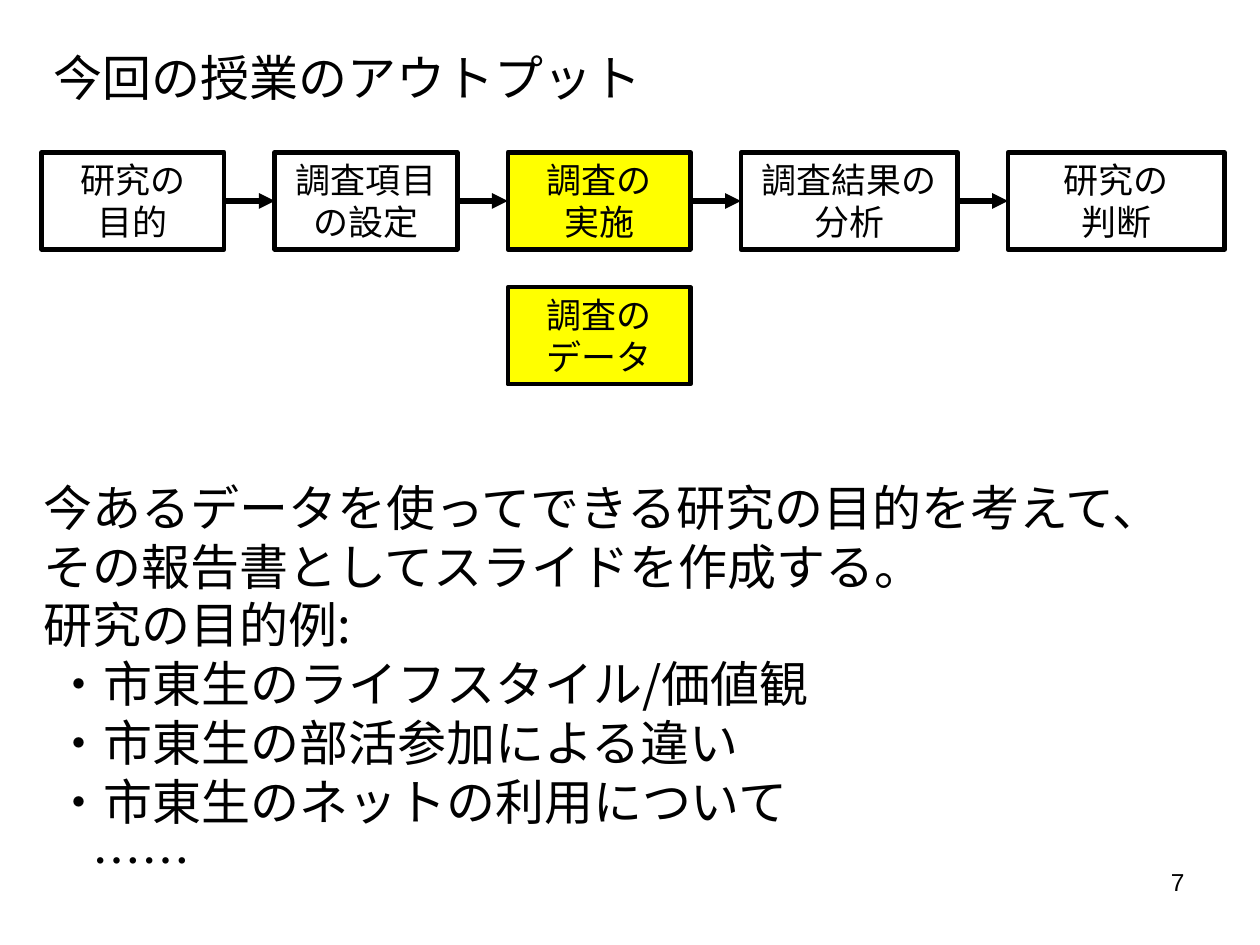
from pptx import Presentation
from pptx import util as u
from pptx.dml.color import RGBColor
from pptx.enum import shapes, text
from pptx.oxml.ns import qn
from lxml import etree

BLACK = RGBColor(0, 0, 0)
WHITE = RGBColor(255, 255, 255)
YELLOW = RGBColor(255, 255, 0)
JAPANESE = "Noto Sans CJK JP"

# Content
TITLE = "今回の授業のアウトプット"
STEPS = [  # text, width, fill
    ("研究の\v目的", 1.45, WHITE),
    ("調査項目の設定", 1.45, WHITE),
    ("調査の\v実施", 1.45, YELLOW),
    ("調査結果の分析", 1.72, WHITE),
    ("研究の\v判断", 1.72, WHITE),
]
OUTPUT = "調査の\vデータ"
OUTPUT_STEP = 2
EXPLANATION = [
    "今あるデータを使ってできる研究の目的を考えて、その報告書としてスライドを作成する。",
    "研究の目的例:",
    " ・市東生のライフスタイル/価値観",
    " ・市東生の部活参加による違い",
    " ・市東生のネットの利用について",
    "　……",
]
PAGE_NUMBER = "7"

# Layout in inches
FLOW_LEFT, FLOW_TOP, GAP = 0.33, 1.21, 0.4
BOX_HEIGHT, OUTPUT_TOP = 0.77, 2.28

prs = Presentation()
prs.slide_width, prs.slide_height = u.Inches(10), u.Inches(7.5)
slide = prs.slides.add_slide(prs.slide_layouts[6])


def write(shape, paragraphs, size, font=JAPANESE, align=text.PP_ALIGN.LEFT,
          anchor=text.MSO_ANCHOR.TOP):
    frame = shape.text_frame
    frame.word_wrap = True
    frame.vertical_anchor = anchor
    for i, words in enumerate(paragraphs):
        para = frame.add_paragraph() if i else frame.paragraphs[0]
        para.text = words
        para.alignment = align
        if font == JAPANESE:
            para.line_spacing = u.Pt(size * 1.2)
        for run in para.runs:
            for name, value in {"size": u.Pt(size), "name": font}.items():
                setattr(run.font, name, value)
            run.font.color.rgb = BLACK
            east_asian = etree.SubElement(run.font._element, qn("a:ea"))
            east_asian.set("typeface", font)


def add_text(place, paragraphs, size, **style):
    write(slide.shapes.add_textbox(*map(u.Inches, place)), paragraphs, size, **style)


def add_box(left, top, width, words, fill):
    box = slide.shapes.add_shape(shapes.MSO_SHAPE.RECTANGLE,
                                 *map(u.Inches, (left, top, width, BOX_HEIGHT)))
    box.shadow.inherit = False
    box.fill.solid()
    box.fill.fore_color.rgb = fill
    box.line.color.rgb = BLACK
    box.line.width = u.Pt(2.5)
    write(box, [words], 20, align=text.PP_ALIGN.CENTER, anchor=text.MSO_ANCHOR.MIDDLE)
    return box


def add_arrow(source, target):
    arrow = slide.shapes.add_connector(shapes.MSO_CONNECTOR.STRAIGHT, 0, 0, 0, 0)
    arrow.begin_connect(source, 3)
    arrow.end_connect(target, 1)
    arrow.line.color.rgb = BLACK
    arrow.line.width = u.Pt(3)
    etree.SubElement(arrow.line._get_or_add_ln(), qn("a:tailEnd")).set("type", "triangle")
    etree.SubElement(arrow._element.spPr, qn("a:effectLst"))


# Page number and title
add_text((7.17, 6.83, 2.33, 0.52), [PAGE_NUMBER], 14, font="Arial",
         align=text.PP_ALIGN.RIGHT)
add_text((0.33, 0.33, 10, 0.57), [TITLE], 28)

# Research steps, left to right
left, steps = FLOW_LEFT, []
for words, width, fill in STEPS:
    steps.append(add_box(left, FLOW_TOP, width, words, fill))
    left += width + GAP
for source, target in zip(steps, steps[1:]):
    add_arrow(source, target)

# Output below its step
output_left = steps[OUTPUT_STEP].left.inches
add_box(output_left, OUTPUT_TOP, STEPS[OUTPUT_STEP][1], OUTPUT, YELLOW)

# Explanation
add_text((0.25, 3.74, 9.25, 4.34), EXPLANATION, 28)

prs.save("out.pptx")
